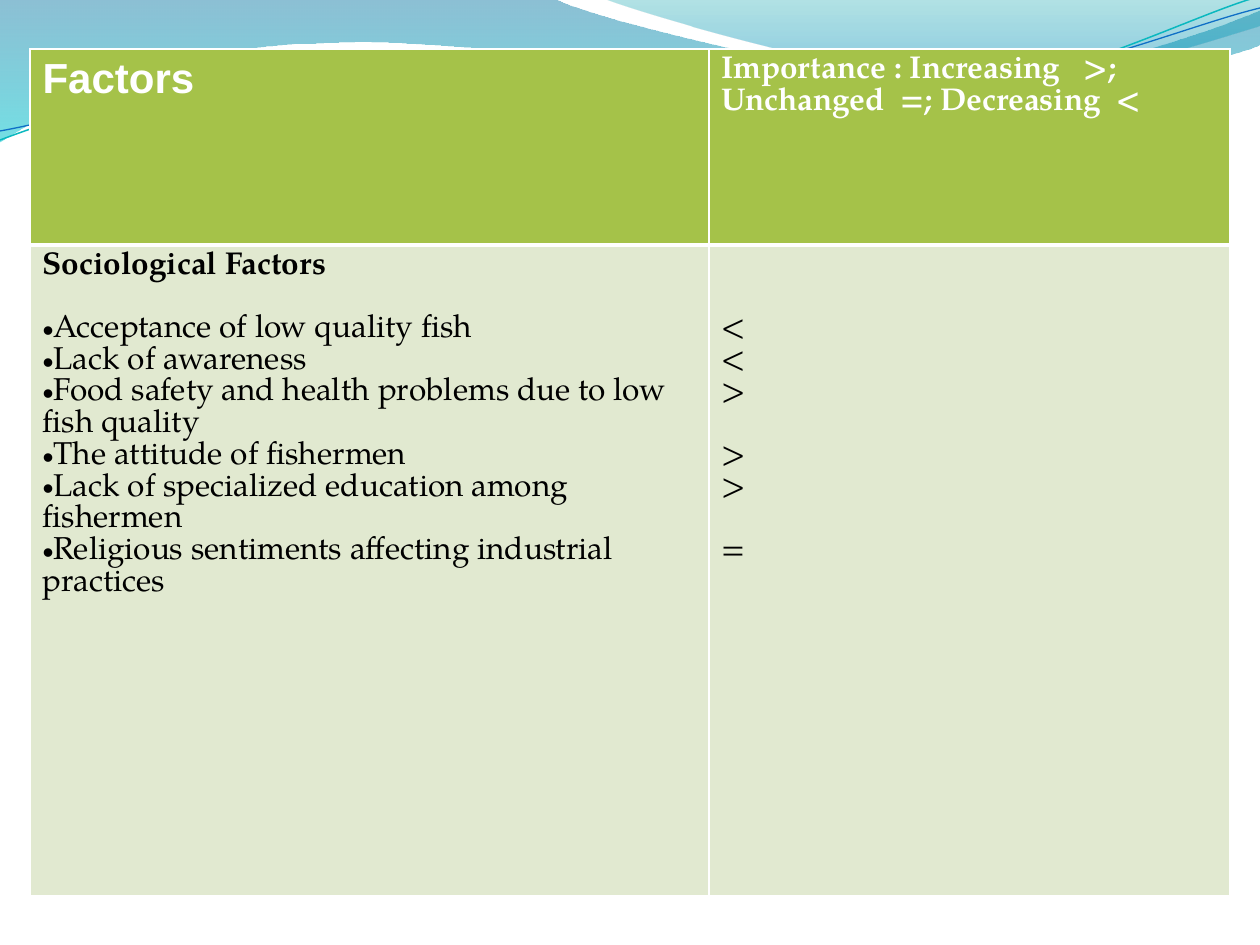
import pptx
import pptx.util
import pptx.dml.color
import pptx.enum.text
import pptx.oxml
import pptx.oxml.ns
from lxml import etree

PX = 914400 // 126
SERIF = "TeX Gyre Pagella"
WHITE, BLACK = "FFFFFF", "000000"
GREEN, PALE = "A5C249", "E1E9D0"


def px(n):
    return pptx.util.Emu(round(n * PX))


def rgb(code):
    return pptx.dml.color.RGBColor.from_string(code)


def sub(node, tag, **attrs):
    return etree.SubElement(node, pptx.oxml.ns.qn(tag), **attrs)


def bend(shape, parts):
    lines = iter(list(shape._element.iter(pptx.oxml.ns.qn("a:lnTo"))))
    for part in parts:
        group = [next(lines) for i in range(0, len(part), 2)]
        if len(group) == 3:
            arc = etree.Element(pptx.oxml.ns.qn("a:cubicBezTo"))
            group[0].addprevious(arc)
            for line in group:
                arc.append(line[0])
                line.getparent().remove(line)


def curve(slide, box, start, parts, close):
    left, top = box
    pairs = [start] + [part[i:i + 2] for part in parts for i in range(0, len(part), 2)]
    points = [(px(left + x), px(top + y)) for x, y in pairs]
    build = slide.shapes.build_freeform(*points[0], scale=1.0)
    build.add_line_segments(points[1:], close=close)
    shape = build.convert_to_shape()
    bend(shape, parts)
    shape.shadow.inherit = False
    return shape


def wave(slide, box, start, parts, stops):
    shape = curve(slide, box, start, parts, True)
    shape.line.fill.background()
    shape.fill.gradient()
    shape.fill.gradient_angle = 270
    for stop, (place, code, alpha) in zip(shape.fill.gradient_stops, stops):
        stop.position = place
        stop.color.rgb = rgb(code)
    hues = shape._element.spPr.iter(pptx.oxml.ns.qn("a:srgbClr"))
    for hue, (place, code, alpha) in zip(hues, stops):
        sub(hue, "a:alpha", val=str(alpha * 1000))


def strand(slide, box, start, parts, code, width):
    shape = curve(slide, box, start, parts, False)
    shape.fill.background()
    shape.line.color.rgb = rgb(code)
    shape.line.width = pptx.util.Pt(width)


def banner(slide, box):
    wave(slide, box, (0, 0),
         [(554, -1), (600, 21, 837, 79, 955, 79), (1075, 79, 1207, 33, 1260, 11),
          (1261, 45), (1237, 55, 1096, 96, 940, 94), (784, 94, 481, 35, 324, 43),
          (163, 45, 58, 105, -1, 142)],
         [(0, "0074A1", 45), (1, "00C6CF", 55)])
    wave(slide, box, (604, -1),
         [(641, 14, 859, 78, 969, 82), (1079, 87, 1211, 40, 1260, 26), (1260, 0)],
         [(0, "00A1A9", 30), (0.8, "008BBF", 45)])
    strand(slide, box, (0, 140),
           [(60, 117, 199, 72, 349, 66), (498, 59, 747, 112, 898, 101),
            (1050, 91, 1182, 19, 1257, -3)], "0AB8BF", 0.85)
    strand(slide, box, (0, 131),
           [(59, 121, 207, 77, 357, 71), (508, 64, 752, 106, 903, 94),
            (1053, 84, 1185, 26, 1260, 8)], "0F6FC6", 0.75)


def write(frame, text, size=18, font=SERIF, color=BLACK, bold=False,
          lead=18.1, before=0, bullet=False):
    para = frame.paragraphs[0]
    if para.runs:
        para = frame.add_paragraph()
    para.alignment = pptx.enum.text.PP_ALIGN.LEFT
    para.space_before = pptx.util.Pt(before)
    if lead:
        para.line_spacing = pptx.util.Pt(lead)
    if bullet:
        props = para._p.get_or_add_pPr()
        props.set("marL", "0")
        props.set("indent", "0")
        sub(props, "a:buFont", typeface="Arial")
        sub(props, "a:buChar", char="•")
    run = para.add_run()
    run.text = text
    run.font.size = pptx.util.Pt(size)
    run.font.name = font
    run.font.bold = bold
    run.font.color.rgb = rgb(color)


def style(cell, fill, top, base):
    props = cell._tc.get_or_add_tcPr()
    for side, width in (("L", 1), ("R", 1), ("T", top), ("B", base)):
        line = sub(props, "a:ln" + side, w=str(pptx.util.Pt(width)))
        sub(sub(line, "a:solidFill"), "a:srgbClr", val=WHITE)
    cell.fill.solid()
    cell.fill.fore_color.rgb = rgb(fill)


def grid(slide, box):
    left, top, width, height = box
    table = slide.shapes.add_table(2, 2, *map(px, box)).table
    split, head = 679, 196
    for col, size in zip(table.columns, (split, width - split)):
        col.width = px(size)
    for row, size in zip(table.rows, (head, height - head)):
        row.height = px(size)
    for col in (0, 1):
        style(table.cell(0, col), GREEN, 1, 3)
        style(table.cell(1, col), PALE, 3, 1)

    write(table.cell(0, 0).text_frame, "Factors", size=24, font="Arial",
          color=WHITE, bold=True, lead=None)
    for text in ("Importance : Increasing   >;", "Unchanged  =; Decreasing  <"):
        write(table.cell(0, 1).text_frame, text, color=WHITE, bold=True, lead=18)

    names = table.cell(1, 0).text_frame
    write(names, "Sociological Factors", bold=True)
    marks = table.cell(1, 1)
    marks.margin_top = px(70)
    items = [
        ("Acceptance of low quality fish", "<", 0),
        ("Lack of awareness", "<", 0),
        ("Food safety and health problems due to low fish quality", ">", 0),
        ("The attitude of fishermen", ">", 18.1),
        ("Lack of specialized education among fishermen", ">", 0),
        ("Religious sentiments affecting industrial practices", "=", 18.1),
    ]
    for i, (name, mark, gap) in enumerate(items):
        write(names, name, bullet=True, before=0 if i else 18.1)
        write(marks.text_frame, mark, before=gap)


def main():
    deck = pptx.Presentation()
    deck.slide_width, deck.slide_height = px(1260), px(945)
    slide = deck.slides.add_slide(deck.slide_layouts[6])
    banner(slide, (0, 0))
    grid(slide, (30, 49, 1200, 847))
    deck.save("out.pptx")


if __name__ == "__main__":
    main()
